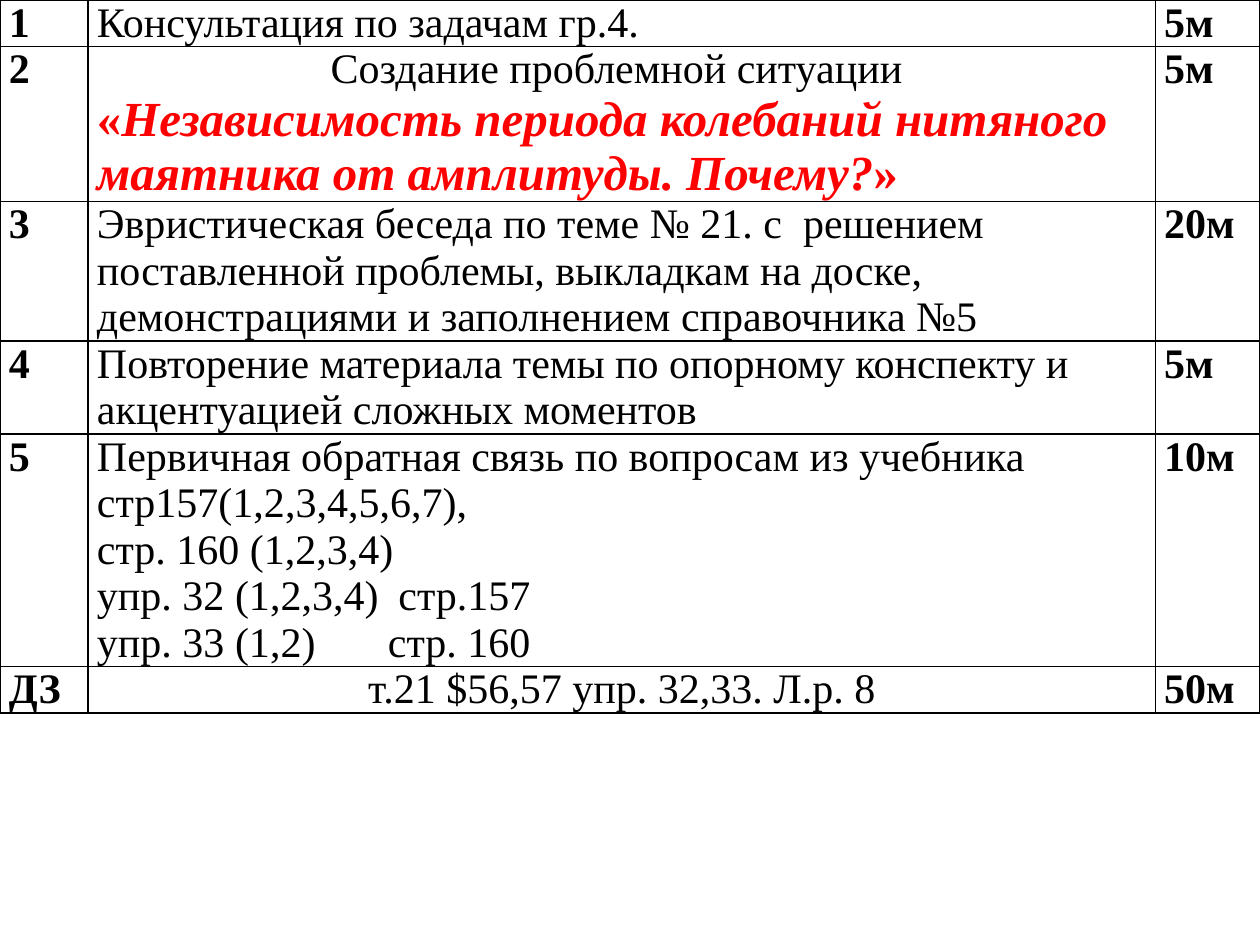
from lxml.etree import SubElement
from pptx import Presentation
from pptx.dml.color import RGBColor
from pptx.enum.text import PP_ALIGN
from pptx.oxml.ns import qn
from pptx.util import Inches, Pt

BLACK = RGBColor(0, 0, 0)
RED = RGBColor(255, 0, 0)
FONT = "Times New Roman"
COLUMN_WIDTHS = [0.7, 8.47, 0.83]
PAGE_TAB = 3.44

PLAIN = dict(size=24, color=BLACK, bold=False, italic=False)
BOLD = dict(PLAIN, bold=True)
QUOTE = dict(size=28, color=RED, bold=True, italic=False)
PROBLEM = dict(QUOTE, italic=True)

LEFT, CENTER = PP_ALIGN.LEFT, PP_ALIGN.CENTER

LESSON_STEPS = [
    ("1", [(LEFT, [("Консультация по задачам гр.4.", PLAIN)])], "5м", 0.37),
    ("2", [
        (CENTER, [("Создание проблемной ситуации ", PLAIN)]),
        (LEFT, [
            ("«", QUOTE),
            ("Независимость периода колебаний нитяного маятника от амплитуды. Почему?", PROBLEM),
            ("»", QUOTE),
        ]),
    ], "5м", 1.23),
    ("3", [(LEFT, [("Эвристическая беседа по теме № 21. с  решением поставленной проблемы, "
                    "выкладкам на доске, демонстрациями и заполнением справочника №5", PLAIN)])],
     "20м", 1.1),
    ("4", [(LEFT, [("Повторение материала темы по опорному конспекту и "
                    "акцентуацией сложных моментов", PLAIN)])], "5м", 0.74),
    ("5", [
        (LEFT, [("Первичная обратная связь по вопросам из учебника "
                 "стр157(1,2,3,4,5,6,7),", PLAIN)]),
        (LEFT, [("стр. 160 (1,2,3,4)", PLAIN)]),
        (LEFT, [("упр. 32 (1,2,3,4)\tстр.157", PLAIN)]),
        (LEFT, [("упр. 33 (1,2)\tстр. 160", PLAIN)]),
    ], "10м", 1.84),
    ("ДЗ", [(CENTER, [("т.21 $56,57 упр. 32,33. Л.р. 8", PLAIN)])], "50м", 0.37),
]


def add_right_tab(para, position):
    tabs = SubElement(para._p.get_or_add_pPr(), qn("a:tabLst"))
    SubElement(tabs, qn("a:tab"), pos=str(Inches(position)), algn="r")


def write_cell(cell, paragraphs):
    frame = cell.text_frame
    for index, (alignment, spans) in enumerate(paragraphs):
        para = frame.add_paragraph() if index else frame.paragraphs[0]
        para.alignment = alignment
        if any("\t" in text for text, style in spans):
            add_right_tab(para, PAGE_TAB)
        for text, style in spans:
            span = para.add_run()
            span.text = text
            span.font.name = FONT
            span.font.size = Pt(style["size"])
            span.font.bold = style["bold"]
            span.font.italic = style["italic"]
            span.font.color.rgb = style["color"]


def format_cell(cell):
    cell.margin_left = cell.margin_right = Inches(0.07)
    cell.margin_top = cell.margin_bottom = 0
    properties = cell._tc.get_or_add_tcPr()
    for side in ("lnL", "lnR", "lnT", "lnB"):
        line = SubElement(properties, qn(f"a:{side}"), w=str(Pt(1)))
        fill = SubElement(line, qn("a:solidFill"))
        SubElement(fill, qn("a:srgbClr"), val=str(BLACK))
    cell.fill.background()


def main():
    deck = Presentation()
    deck.slide_width, deck.slide_height = Inches(10), Inches(7.5)
    page = deck.slides.add_slide(deck.slide_layouts[6])
    height = sum(step[-1] for step in LESSON_STEPS)
    table = page.shapes.add_table(len(LESSON_STEPS), len(COLUMN_WIDTHS), 0, 0,
                                  Inches(10), Inches(height)).table
    table.first_row = table.horz_banding = False
    for column, width in zip(table.columns, COLUMN_WIDTHS):
        column.width = Inches(width)
    for row, (number, activity, duration, row_height) in zip(table.rows, LESSON_STEPS):
        row.height = Inches(row_height)
        contents = ([(LEFT, [(number, BOLD)])], activity, [(LEFT, [(duration, BOLD)])])
        for cell, paragraphs in zip(row.cells, contents):
            format_cell(cell)
            write_cell(cell, paragraphs)
    deck.save("out.pptx")


if __name__ == "__main__":
    main()
